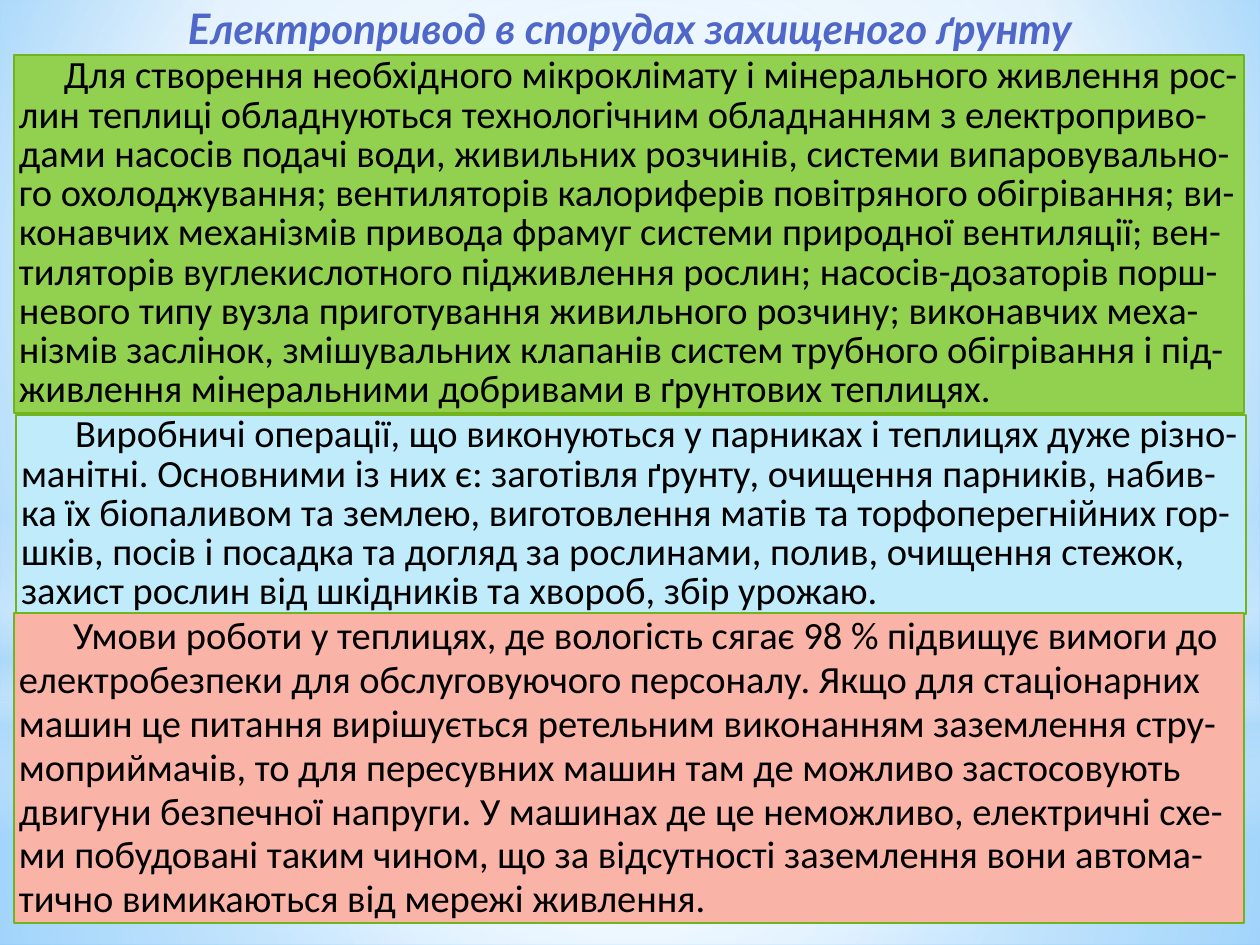
"""Build a slide on electric drives in greenhouse structures."""
import pptx
import pptx.dml.color
import pptx.enum.shapes
import pptx.enum.text
import pptx.oxml
import pptx.oxml.ns
import pptx.util

COLORS = {
    "title": "4E67C8",
    "text": "000000",
    "border": "72B41D",
    "green": "92D050",
    "blue": "BFEBFA",
    "pink": "F9B3A7",
    "white": "FFFFFF",
    "haze": "B4DCFA",
    "sky": "9ED5FF",
    "deep": "5BB9FF",
}
SHAPE = pptx.enum.shapes.MSO_SHAPE
ANCHOR = pptx.enum.text.MSO_ANCHOR
ALIGN = pptx.enum.text.PP_ALIGN
CENTER = (50, 50, 50, 50)

EQUIPMENT = (
    "Для створення необхідного мікроклімату і мінерального живлення рос-лин "
    "теплиці обладнуються технологічним обладнанням з електроприво-дами насосів "
    "подачі води, живильних розчинів, системи випаровувально-го охолоджування; "
    "вентиляторів калориферів повітряного обігрівання; ви-конавчих механізмів "
    "привода фрамуг системи природної вентиляції; вен-тиляторів вуглекислотного "
    "підживлення рослин; насосів-дозаторів порш-невого типу вузла приготування "
    "живильного розчину; виконавчих меха-нізмів заслінок, змішувальних клапанів "
    "систем трубного обігрівання і під-живлення мінеральними добривами в "
    "ґрунтових теплицях."
)
OPERATIONS = (
    "Виробничі операції, що виконуються у парниках і теплицях дуже "
    "різно-манітні. Основними із них є: заготівля ґрунту, очищення парників, "
    "набив-ка їх біопаливом та землею, виготовлення матів та торфоперегнійних "
    "гор-шків, посів і посадка та догляд за рослинами, полив, очищення стежок, "
    "захист рослин від шкідників та хвороб, збір урожаю."
)
SAFETY = (
    "Умови роботи у теплицях, де вологість сягає 98 % підвищує вимоги до "
    "електробезпеки для обслуговуючого персоналу. Якщо для стаціонарних машин "
    "це питання вирішується ретельним виконанням заземлення стру-моприймачів, "
    "то для пересувних машин там де можливо застосовують двигуни безпечної "
    "напруги. У машинах де це неможливо, електричні схе-ми побудовані таким "
    "чином, що за відсутності заземлення вони автома-тично вимикаються від "
    "мережі живлення."
)


def px(n):
    """Turn pixels into EMU."""
    return pptx.util.Emu(round(n * 914400 / 126))


def rgb(name):
    """Look up a palette colour."""
    return pptx.dml.color.RGBColor.from_string(COLORS[name])


def set_gradient(fill, element, stops, focus=None):
    """Fill with (position, colour, opacity) stops, circular if a focus is given."""
    fill.gradient()
    grad = element.find(".//" + pptx.oxml.ns.qn("a:gradFill"))
    for child in list(grad):
        grad.remove(child)
    gs = "".join(
        f'<a:gs pos="{pos * 1000}"><a:srgbClr val="{COLORS[name]}">'
        f'<a:alpha val="{alpha * 1000}"/></a:srgbClr></a:gs>'
        for pos, name, alpha in stops
    )
    if focus:
        sides = " ".join(f'{k}="{v * 1000}"' for k, v in zip("ltrb", focus))
        shade = f'<a:path path="circle"><a:fillToRect {sides}/></a:path>'
    else:
        shade = '<a:lin ang="5400000" scaled="0"/>'
    ns = pptx.oxml.ns.nsdecls("a")
    new = pptx.oxml.parse_xml(
        f"<a:gradFill {ns}><a:gsLst>{gs}</a:gsLst>{shade}</a:gradFill>"
    )
    grad.extend(list(new))


def add_shape(s, kind, box):
    """Add a preset shape without shadow or outline."""
    sp = s.shapes.add_shape(kind, *map(px, box))
    sp.shadow.inherit = False
    sp.line.fill.background()
    return sp


def add_glow(s, kind, box, stops, focus=None):
    """Add a translucent layer of the backdrop."""
    sp = add_shape(s, kind, box)
    set_gradient(sp.fill, sp.element, stops, focus)


def set_text(sp, text, size=22, font="Calibri", color="text", align=ALIGN.LEFT,
             anchor=ANCHOR.MIDDLE, spacing=0.85, inset=5, indent=0, strong=False):
    """Write one formatted paragraph into a shape."""
    tf = sp.text_frame
    tf.word_wrap = True
    tf.auto_size = pptx.enum.text.MSO_AUTO_SIZE.SHAPE_TO_FIT_TEXT
    tf.vertical_anchor = anchor
    tf.margin_left = tf.margin_right = px(inset)
    tf.margin_top = tf.margin_bottom = 0
    p = tf.paragraphs[0]
    p.alignment = align
    p.line_spacing = spacing
    p.space_before = p.space_after = pptx.util.Pt(0)
    if indent:
        p._p.get_or_add_pPr().set("indent", str(px(indent)))
    r = p.add_run()
    r.text = text
    r.font.size = pptx.util.Pt(size)
    r.font.name = font
    r.font.color.rgb = rgb(color)
    r.font.bold = r.font.italic = r.font.underline = strong


def add_panel(s, box, fill, text, **fmt):
    """Add a bordered text panel."""
    sp = add_shape(s, SHAPE.RECTANGLE, box)
    sp.fill.solid()
    sp.fill.fore_color.rgb = rgb(fill)
    sp.line.color.rgb = rgb("border")
    sp.line.width = pptx.util.Pt(1.25)
    set_text(sp, text, **fmt)


def add_backdrop(s):
    """Paint the background and its soft light layers."""
    set_gradient(s.background.fill, s.element,
                 [(0, "sky", 100), (60, "white", 100), (100, "deep", 100)],
                 (20, 10, 20, 60))
    add_glow(s, SHAPE.RECTANGLE, (0, 703, 1260, 242),
             [(0, "white", 91), (37, "white", 76), (100, "haze", 79)], CENTER)
    add_glow(s, SHAPE.RECTANGLE, (0, 0, 1260, 703),
             [(0, "white", 89), (48, "white", 62), (100, "haze", 79)], CENTER)
    add_glow(s, SHAPE.RECTANGLE, (0, 519, 1260, 315),
             [(0, "white", 0), (29, "white", 30), (45, "haze", 40),
              (55, "white", 26), (65, "haze", 60), (100, "white", 0)])
    add_glow(s, SHAPE.OVAL, (0, 220, 1260, 703),
             [(0, "white", 100), (56, "white", 0)], CENTER)


def add_title(s, box, text):
    """Place the title placeholder above the backdrop."""
    sp = s.shapes.title
    sp.element.getparent().append(sp.element)
    sp.left, sp.top, sp.width, sp.height = map(px, box)
    set_text(sp, text, size=24, font="Lato", color="title", align=ALIGN.CENTER,
             anchor=ANCHOR.TOP, inset=0, strong=True)


def main():
    """Assemble and save the slide."""
    prs = pptx.Presentation()
    prs.slide_width, prs.slide_height = px(1260), px(945)
    s = prs.slides.add_slide(prs.slide_layouts[5])
    add_backdrop(s)
    add_title(s, (15, 10, 1230, 43), "Електропривод в спорудах захищеного ґрунту")
    add_panel(s, (14, 55, 1230, 358), "green", EQUIPMENT, indent=45)
    add_panel(s, (16, 415, 1230, 199), "blue", OPERATIONS, indent=54)
    add_panel(s, (14, 613, 1230, 310), "pink", SAFETY, indent=54, spacing=0.95)
    prs.save("out.pptx")


if __name__ == "__main__":
    main()
